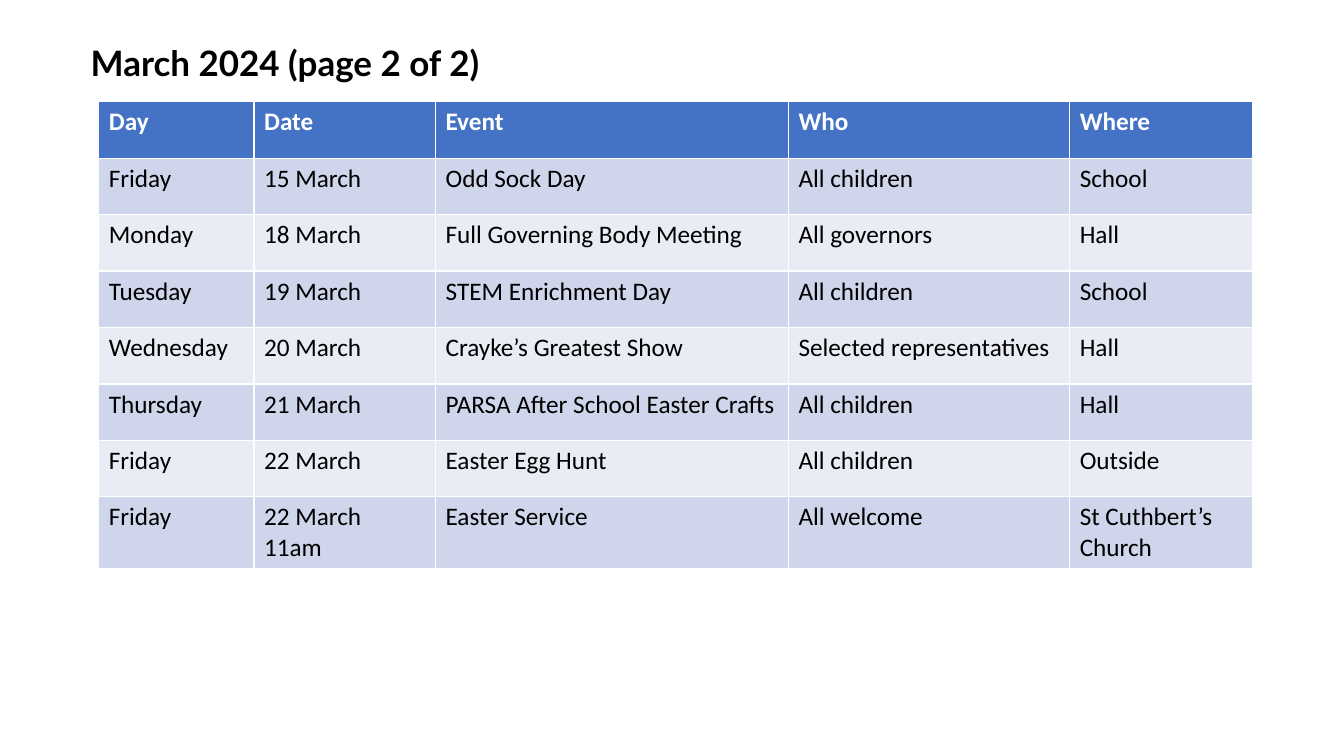
from pptx import Presentation
from pptx.dml.color import RGBColor
from pptx.enum import text
from pptx.util import Inches, Pt

HEADER_FILL = "4472C4"
BAND_FILLS = ("CFD5EA", "E9EBF5")
COLUMN_WIDTHS = (1.54, 1.8, 3.5, 2.79, 1.81)
ROW_HEIGHT = 0.56
HEADINGS = ("Day", "Date", "Event", "Who", "Where")
EVENTS = (
    ("Friday", "15 March", "Odd Sock Day", "All children", "School"),
    ("Monday", "18 March", "Full Governing Body Meeting", "All governors", "Hall"),
    ("Tuesday", "19 March", "STEM Enrichment Day", "All children", "School"),
    ("Wednesday", "20 March", "Crayke’s Greatest Show", "Selected representatives", "Hall"),
    ("Thursday", "21 March", "PARSA After School Easter Crafts", "All children", "Hall"),
    ("Friday", "22 March", "Easter Egg Hunt", "All children", "Outside"),
    ("Friday", "22 March\n11am", "Easter Service", "All welcome", "St Cuthbert’s Church"),
)


def color(value):
    return RGBColor.from_string(value)


def write(frame, wording, ink, **font_format):
    """Fill a text frame, one paragraph per line of wording."""
    frame.text = wording
    for para in frame.paragraphs:
        para.alignment = text.PP_ALIGN.LEFT
        for span in para.runs:
            span.font.color.rgb = color(ink)
            for name, value in font_format.items():
                setattr(span.font, name, value)


def add_title(page, wording, left, top, width, height):
    title = page.shapes.title
    box = {"left": left, "top": top, "width": width, "height": height}
    for name, value in box.items():
        setattr(title, name, Inches(value))
    frame = title.text_frame
    frame.word_wrap = True
    frame.auto_size = text.MSO_AUTO_SIZE.NONE
    frame.vertical_anchor = text.MSO_ANCHOR.TOP
    write(frame, wording, "000000", name="Lato", size=Pt(25), bold=True)


def add_calendar(page, left, top):
    rows = (HEADINGS, *EVENTS)
    table = page.shapes.add_table(
        len(rows), len(HEADINGS), Inches(left), Inches(top),
        Inches(sum(COLUMN_WIDTHS)), Inches(ROW_HEIGHT * len(rows))).table
    for column, width in zip(table.columns, COLUMN_WIDTHS):
        column.width = Inches(width)
    for index, row in enumerate(rows):
        is_header = index == 0
        fill = HEADER_FILL if is_header else BAND_FILLS[(index - 1) % 2]
        ink = "FFFFFF" if is_header else "000000"
        table.rows[index].height = Inches(ROW_HEIGHT)
        for cell, wording in zip(table.rows[index].cells, row):
            cell.fill.solid()
            cell.fill.fore_color.rgb = color(fill)
            write(cell.text_frame, wording, ink,
                  name="Calibri", size=Pt(18), bold=is_header)


def main():
    deck = Presentation()
    deck.slide_width, deck.slide_height = Inches(13.33), Inches(7.5)
    page = deck.slides.add_slide(deck.slide_layouts[5])
    add_calendar(page, 0.98, 1.01)
    add_title(page, "March 2024 (page 2 of 2)", 0.8, 0.36, 4.45, 0.52)
    deck.save("out.pptx")


if __name__ == "__main__":
    main()
